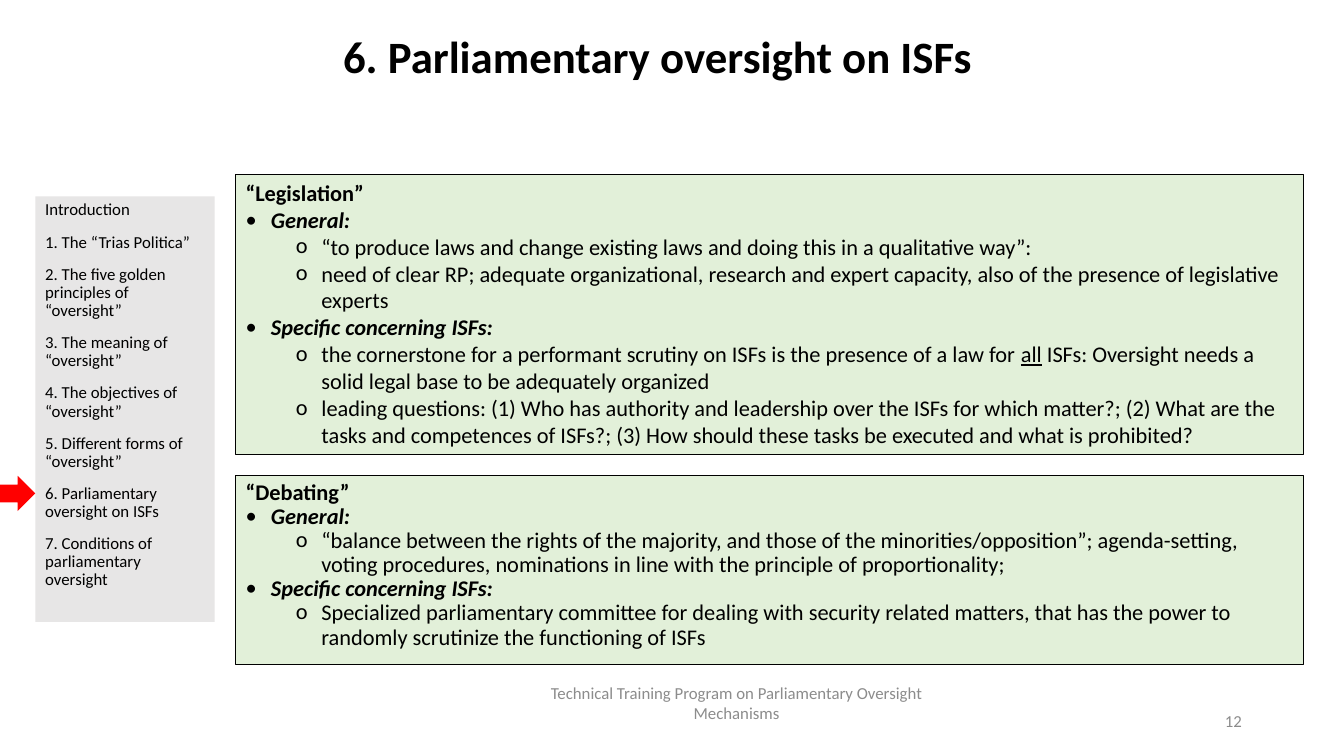
import pptx
import pptx.util
import pptx.dml.color
import pptx.enum.shapes
import pptx.enum.text
import pptx.oxml.ns
from lxml import etree

Cm = pptx.util.Cm
Pt = pptx.util.Pt
SHAPE = pptx.enum.shapes.MSO_SHAPE
ALIGN = pptx.enum.text.PP_ALIGN
ANCHOR = pptx.enum.text.MSO_ANCHOR

FONT = "Calibri"
COLORS = {
    "text": "000000",
    "footer": "8C8C8C",
    "sidebar": "E7E6E6",
    "panel": "E2F0D9",
    "arrow": "FF0000",
}
BULLETS = {"topic": ("•", 0.64, 0), "detail": ("o", 1.91, 1)}

SECTIONS = [
    "Introduction",
    "1. The “Trias Politica”",
    "2. The five golden principles of “oversight”",
    "3. The meaning of “oversight”",
    "4. The objectives of “oversight”",
    "5. Different forms of “oversight”",
    "6. Parliamentary oversight on ISFs",
    "7. Conditions of parliamentary oversight",
]
LEGISLATION = [
    ("heading", ["“Legislation”"]),
    ("topic", ["General:"]),
    ("detail", ["“to produce laws and change existing laws and doing this in a qualitative way”:"]),
    ("detail", ["need of clear RP; adequate organizational, research and expert capacity, "
                "also of the presence of legislative experts"]),
    ("topic", ["Specific concerning ISFs:"]),
    ("detail", ["the cornerstone for a performant scrutiny on ISFs is the presence of a law for ",
                "all",
                " ISFs: Oversight needs a solid legal base to be adequately organized"]),
    ("detail", ["leading questions: (1) Who has authority and leadership over the ISFs for which matter?; "
                "(2) What are the tasks and competences of ISFs?; "
                "(3) How should these tasks be executed and what is prohibited?"]),
]
DEBATING = [
    ("heading", ["“Debating”"]),
    ("topic", ["General:"]),
    ("detail", ["“balance between the rights of the majority, and those of the minorities/opposition”; "
                "agenda-setting, voting procedures, nominations in line with the principle of proportionality;"]),
    ("topic", ["Specific concerning ISFs:"]),
    ("detail", ["Specialized parliamentary committee for dealing with security related matters, "
                "that has the power to randomly scrutinize the functioning of ISFs"]),
]


def rgb(name):
    return pptx.dml.color.RGBColor.from_string(COLORS[name])


def add_run(p, text, size, color="text", bold=False, italic=False, underline=False):
    r = p.add_run()
    r.text = text
    r.font.name = FONT
    r.font.size = Pt(size)
    r.font.color.rgb = rgb(color)
    r.font.bold = bold
    r.font.italic = italic
    r.font.underline = underline


def add_bullet(p, kind):
    char, indent, p.level = BULLETS[kind]
    pPr = p._p.get_or_add_pPr()
    pPr.set("marL", str(Cm(indent)))
    pPr.set("indent", str(Cm(-0.64)))
    etree.SubElement(pPr, pptx.oxml.ns.qn("a:buFont")).set("typeface", FONT)
    etree.SubElement(pPr, pptx.oxml.ns.qn("a:buChar")).set("char", char)


def add_block(s, shape, box, fill, line=None):
    sp = s.shapes.add_shape(shape, *map(Cm, box))
    sp.shadow.inherit = False
    sp.fill.solid()
    sp.fill.fore_color.rgb = rgb(fill)
    if line:
        sp.line.color.rgb = rgb(line)
        sp.line.width = Pt(0.75)
    else:
        sp.line.fill.background()
    tf = sp.text_frame
    tf.word_wrap = True
    tf.vertical_anchor = ANCHOR.TOP
    return tf


def add_label(s, box, text, size, align, color="text", anchor=ANCHOR.MIDDLE, bold=False):
    tf = s.shapes.add_textbox(*map(Cm, box)).text_frame
    tf.word_wrap = True
    tf.vertical_anchor = anchor
    p = tf.paragraphs[0]
    p.alignment = align
    p.line_spacing = 0.9 if bold else 1.0
    add_run(p, text, size, color, bold)


def add_paragraph(tf, i, spacing):
    p = tf.add_paragraph() if i else tf.paragraphs[0]
    p.alignment = ALIGN.LEFT
    p.line_spacing = spacing
    return p


def add_sidebar(s, box, sections):
    tf = add_block(s, SHAPE.RECTANGLE, box, "sidebar")
    for i, section in enumerate(sections):
        p = add_paragraph(tf, i, 0.9)
        if i:
            p.space_before = Pt(10)
        add_run(p, section, 12)


def add_panel(s, top, height, content, spacing):
    tf = add_block(s, SHAPE.RECTANGLE, (5.94, top, 26.92, height), "panel", "text")
    for i, (kind, texts) in enumerate(content):
        p = add_paragraph(tf, i, spacing)
        if kind in BULLETS:
            add_bullet(p, kind)
        for text in texts:
            add_run(p, text, 16, bold=kind != "detail", italic=kind == "topic",
                    underline=text == "all")


def main():
    prs = pptx.Presentation()
    prs.slide_width = Cm(33.87)
    prs.slide_height = Cm(19.05)
    s = prs.slides.add_slide(prs.slide_layouts[6])
    add_label(s, (12.85, 17.2, 11.43, 1.02),
              "Technical Training Program on Parliamentary Oversight Mechanisms",
              12, ALIGN.CENTER, "footer")
    add_label(s, (23.93, 17.65, 7.62, 1.02), "12", 12, ALIGN.RIGHT, "footer")
    add_sidebar(s, (0.89, 4.95, 4.52, 10.72), SECTIONS)
    add_block(s, SHAPE.RIGHT_ARROW, (-0.28, 11.99, 1.17, 0.89), "arrow")
    add_label(s, (7.62, 0.76, 17.91, 3.18), "6. Parliamentary oversight on ISFs",
              32, ALIGN.CENTER, anchor=ANCHOR.TOP, bold=True)
    add_panel(s, 4.39, 7.06, LEGISLATION, 1.0)
    add_panel(s, 11.99, 4.75, DEBATING, 0.9)
    prs.save("out.pptx")


if __name__ == "__main__":
    main()
